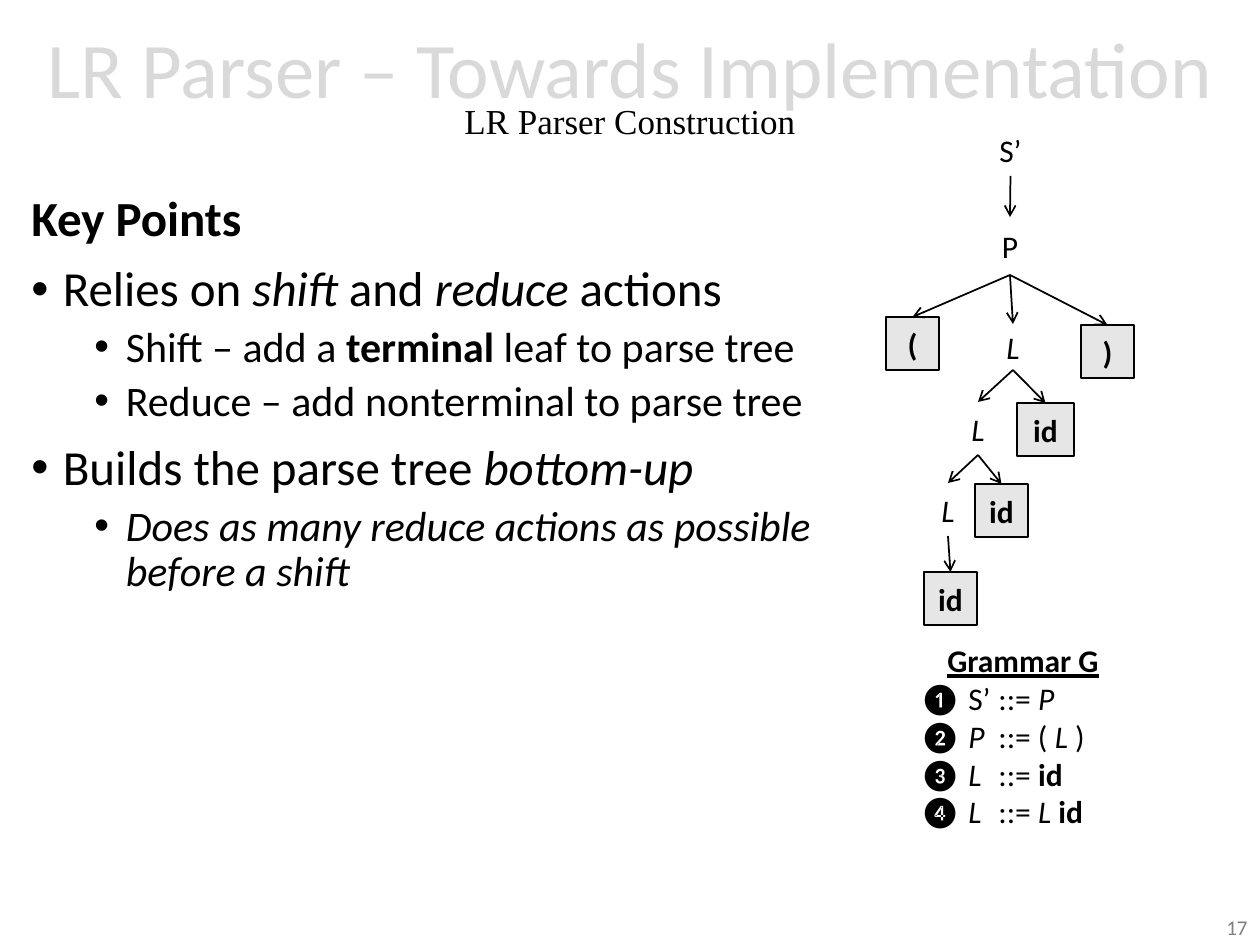
import pptx
import pptx.dml.color
import pptx.enum.shapes
import pptx.enum.text
import pptx.oxml
import pptx.oxml.ns
import pptx.util

PX = 914400 / 126
ALIGN = pptx.enum.text.PP_ALIGN
ANCHOR = pptx.enum.text.MSO_ANCHOR
SHAPES = pptx.enum.shapes.MSO_SHAPE
BLACK, WHITE, GREY, PALE, LEAF = "000000", "FFFFFF", "808080", "D9D9D9", "E7E6E6"
STYLES = {"b": "bold", "i": "italic", "u": "underline"}


def px(n):
    return pptx.util.Emu(round(n * PX))


def color(hex_string):
    return pptx.dml.color.RGBColor.from_string(hex_string)


def xml(tag, inner="", **attrs):
    text = "".join(f' {k}="{v}"' for k, v in attrs.items())
    ns = pptx.oxml.ns.nsdecls("a")
    return pptx.oxml.parse_xml(f"<a:{tag} {ns}{text}>{inner}</a:{tag}>")


def add_run(p, text, size, style="", font="Calibri", fill=BLACK):
    """Style holds any of the letters b, i and u."""
    r = p.add_run()
    r.text = text
    formats = {"name": font, "size": pptx.util.Pt(size)}
    formats.update({STYLES[letter]: True for letter in style})
    for name, value in formats.items():
        setattr(r.font, name, value)
    r.font.color.rgb = color(fill)
    return r


def add_text(slide, box, anchor=ANCHOR.TOP):
    tf = slide.shapes.add_textbox(*map(px, box)).text_frame
    tf.word_wrap = True
    tf.vertical_anchor = anchor
    return tf


def format_paragraph(p, **formats):
    for name, value in formats.items():
        setattr(p, name, value)


def add_title(slide, box):
    p = add_text(slide, box, ANCHOR.MIDDLE).paragraphs[0]
    format_paragraph(p, alignment=ALIGN.CENTER, line_spacing=0.7)
    r = add_run(p, "LR Parser – Towards Implementation", 45, fill=PALE)
    outline = f'<a:solidFill><a:srgbClr val="{BLACK}"/></a:solidFill>'
    r.font._element.insert(0, xml("ln", outline, w=12700))
    p.add_line_break()
    add_run(p, "LR Parser Construction", 20, font="Times New Roman")


def add_page_number(slide, box):
    p = add_text(slide, box).paragraphs[0]
    p.alignment = ALIGN.RIGHT
    add_run(p, "17", 12, fill=GREY)


def add_key_points(slide, box):
    # Level None is the heading, 0 and 1 are bullets
    points = [
        (None, [("Key Points", "b")]),
        (0, [("Relies on ", ""), ("shift ", "i"), ("and ", ""), ("reduce", "i"),
             (" actions", "")]),
        (1, [("Shift – add a ", ""), ("terminal", "b"),
             (" leaf to parse tree", "")]),
        (1, [("Reduce – add nonterminal to parse tree", "")]),
        (0, [("Builds the parse tree ", ""), ("bottom-up", "i")]),
        (1, [("Does as many reduce actions as possible before a shift", "i")]),
    ]
    tf = add_text(slide, box)
    for n, (level, runs) in enumerate(points):
        p = tf.add_paragraph() if n else tf.paragraphs[0]
        size, before = (24, 5) if level else (28, 10)
        format_paragraph(p, level=level or 0, line_spacing=0.9,
                         space_before=pptx.util.Pt(before))
        if level is not None:
            pPr = p._p.get_or_add_pPr()
            pPr.set("marL", str(pptx.util.Inches(0.25 + 0.5 * level)))
            pPr.set("indent", str(pptx.util.Inches(-0.25)))
            pPr.append(xml("buFont", typeface="Arial"))
            pPr.append(xml("buChar", char="•"))
        for text, style in runs:
            add_run(p, text, size, style)


def add_node(slide, box, text, style, leaf):
    sp = slide.shapes.add_shape(SHAPES.RECTANGLE, *map(px, box))
    sp.shadow.inherit = False
    sp.fill.solid()
    sp.fill.fore_color.rgb = color(LEAF if leaf else WHITE)
    if leaf:
        sp.line.color.rgb = color(BLACK)
        sp.line.width = pptx.util.Pt(1)
    else:
        sp.line.fill.background()
    tf = sp.text_frame
    for side in ("left", "right", "top", "bottom"):
        setattr(tf, f"margin_{side}", 0)
    tf.vertical_anchor = ANCHOR.MIDDLE
    tf.paragraphs[0].alignment = ALIGN.CENTER
    add_run(tf.paragraphs[0], text, 18, style)
    return sp


def add_edge(slide, parent, child):
    line = slide.shapes.add_connector(
        pptx.enum.shapes.MSO_CONNECTOR.STRAIGHT, 0, 0, 0, 0)
    line.begin_connect(parent, 2)
    line.end_connect(child, 0)
    line.line.color.rgb = color(BLACK)
    line.line.width = pptx.util.Pt(1)
    line.line._get_or_add_ln().append(xml("tailEnd", type="arrow"))
    line._element.spPr.append(xml("effectLst"))


def add_parse_tree(slide, left, top):
    # Name: box, text, style, parent; bold nodes are the terminal leaves
    nodes = {
        "start": ((98, 0, 53, 53), "S’", "", None),
        "P": ((73, 94, 102, 58), "P", "", "start"),
        "open": ((0, 194, 53, 53), "(", "b", "P"),
        "L1": ((108, 201, 38, 46), "L", "i", "P"),
        "close": ((195, 202, 53, 53), ")", "b", "P"),
        "L2": ((75, 279, 34, 53), "L", "i", "L1"),
        "id1": ((131, 280, 57, 53), "id", "b", "L1"),
        "L3": ((45, 360, 34, 53), "L", "i", "L2"),
        "id2": ((89, 361, 53, 53), "id", "b", "L2"),
        "id3": ((38, 449, 53, 53), "id", "b", "L3"),
    }
    placed = {}
    for name, ((x, y, w, h), text, style, _) in nodes.items():
        placed[name] = add_node(slide, (left + x, top + y, w, h), text, style,
                                leaf=style == "b")
    for name, (_, _, _, parent) in nodes.items():
        if parent:
            add_edge(slide, placed[parent], placed[name])


def add_grammar(slide, box):
    rules = [
        [("❶ S’", ""), ("\t::= ", ""), ("P", "i")],
        [("❷", ""), (" P", "i"), ("\t::= ( ", ""), ("L", "i"), (" )", "")],
        [("❸", ""), (" L", "i"), ("\t::= ", ""), ("id", "b")],
        [("❹", ""), (" L", "i"), ("\t::= ", ""), ("L ", "i"), ("id", "b")],
    ]
    tf = add_text(slide, box)
    heading = tf.paragraphs[0]
    heading._p.get_or_add_pPr().set("marL", str(px(28)))
    add_run(heading, "Grammar G", 18, "bu")
    for runs in rules:
        p = tf.add_paragraph()
        # One tab stop lines up the ::= signs
        stop = f'<a:tab pos="{px(79)}" algn="l"/>'
        p._p.get_or_add_pPr().append(xml("tabLst", stop))
        for text, style in runs:
            add_run(p, text, 18, style)


def main():
    prs = pptx.Presentation()
    prs.slide_width, prs.slide_height = px(1260), px(945)
    s = prs.slides.add_slide(prs.slide_layouts[6])
    add_title(s, (0, 0, 1260, 186))
    add_page_number(s, (976, 908, 284, 35))
    add_key_points(s, (19, 188, 832, 656))
    add_parse_tree(s, 886, 123)
    add_grammar(s, (907, 635, 234, 204))
    prs.save("out.pptx")


if __name__ == "__main__":
    main()
